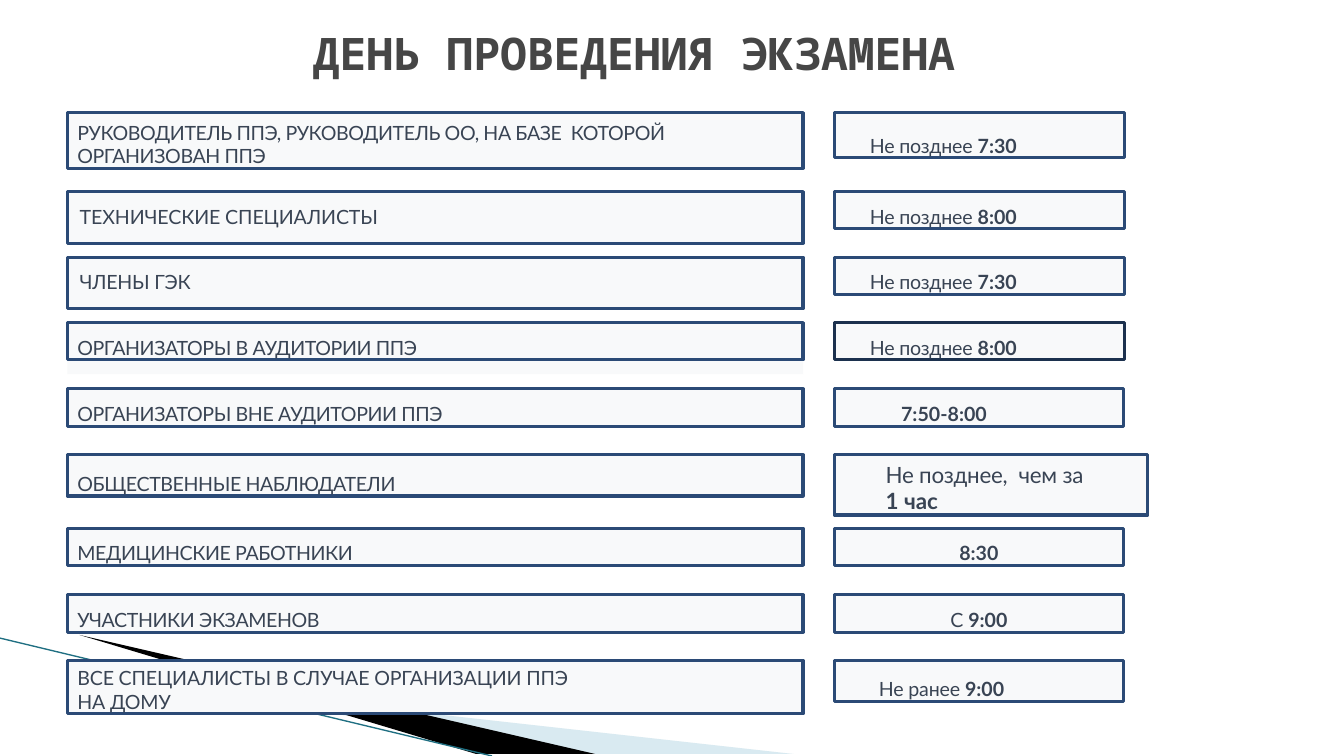
from dataclasses import dataclass

from lxml.etree import SubElement
from pptx import Presentation
from pptx.dml.color import RGBColor
from pptx.enum.shapes import MSO_CONNECTOR, MSO_SHAPE
from pptx.enum.text import MSO_ANCHOR, PP_ALIGN
from pptx.oxml.ns import qn
from pptx.util import Cm, Pt

WHITE_SMOKE = RGBColor(0xF8, 0xF9, 0xFA)
NAVY = RGBColor(0x2B, 0x4A, 0x76)
DARK_NAVY = RGBColor(0x1C, 0x31, 0x4E)
SLATE = RGBColor(0x39, 0x44, 0x54)
TITLE_GREY = RGBColor(0x46, 0x46, 0x46)
PALE_BLUE = RGBColor(0xA0, 0xCB, 0xDC)
TEAL = RGBColor(0x1F, 0x6F, 0x82)
BLACK = RGBColor(0, 0, 0)

LABEL_LEFT, LABEL_WIDTH = 1.7, 18.54
TIME_LEFT = 21.03


@dataclass(frozen=True)
class Label:
    """Who has to come; lengths in cm, letter spacing in points."""
    text: str
    height: float = 0.94
    spacing: float = -0.3
    inset_left: float = 0.25
    inset_top: float = 0.33


@dataclass(frozen=True)
class Time:
    """When to come: plain words followed by bold ones."""
    plain: str
    bold: str
    inset_left: float = 0.89
    inset_top: float = 0.33
    inset_right: float = 0
    width: float = 7.32
    height: float = 0.94
    size: float = 14
    align: PP_ALIGN = PP_ALIGN.LEFT
    border: RGBColor = NAVY


@dataclass(frozen=True)
class Row:
    top: float
    label: Label
    time: Time


ROWS = [
    Row(2.84, Label("РУКОВОДИТЕЛЬ ППЭ, РУКОВОДИТЕЛЬ ОО, НА БАЗЕ  КОТОРОЙ ОРГАНИЗОВАН ППЭ",
                    height=1.4, inset_top=0.2),
        Time("Не позднее ", "7:30", inset_top=0.53, height=1.12)),
    Row(4.83, Label("ТЕХНИЧЕСКИЕ СПЕЦИАЛИСТЫ", height=1.3, spacing=-0.1, inset_left=0.31),
        Time("Не позднее ", "8:00")),
    Row(6.48, Label("ЧЛЕНЫ ГЭК", height=1.3, spacing=-0.2, inset_left=0.31),
        Time("Не позднее ", "7:30")),
    Row(8.13, Label("ОРГАНИЗАТОРЫ В АУДИТОРИИ ППЭ"),
        Time("Не позднее ", "8:00", border=DARK_NAVY)),
    Row(9.8, Label("ОРГАНИЗАТОРЫ ВНЕ АУДИТОРИИ ППЭ"),
        Time("", "7:50-8:00", inset_left=1.68, width=7.28)),
    Row(11.46, Label("ОБЩЕСТВЕННЫЕ НАБЛЮДАТЕЛИ", height=1.04, inset_top=0.43),
        Time("Не позднее,  чем за ", "1 час", inset_left=1.29, inset_top=0.15,
             inset_right=1.3, width=7.9, height=1.52, size=16)),
    Row(13.31, Label("МЕДИЦИНСКИЕ РАБОТНИКИ"),
        Time("", "8:30", inset_left=0, width=7.28, align=PP_ALIGN.CENTER)),
    Row(14.99, Label("УЧАСТНИКИ ЭКЗАМЕНОВ"),
        Time("С ", "9:00", inset_left=0, width=7.28, align=PP_ALIGN.CENTER)),
    Row(16.64, Label("ВСЕ СПЕЦИАЛИСТЫ В СЛУЧАЕ ОРГАНИЗАЦИИ ППЭ\nНА ДОМУ",
                     height=1.35, spacing=-0.15, inset_top=0.15),
        Time("Не ранее ", "9:00", inset_left=1.12, inset_top=0.43, width=7.28, height=1.04)),
]


def format_run(run, font_name: str, size: float, color: RGBColor,
               spacing: float = 0, bold: bool = False) -> None:
    run.font.name = font_name
    run.font.size = Pt(size)
    run.font.color.rgb = color
    run.font.bold = bold
    run.font._element.set("spc", str(round(spacing * 100)))


def add_box(slide, left: float, top: float, width: float, height: float,
            border: RGBColor | None = NAVY):
    shape = slide.shapes.add_shape(MSO_SHAPE.RECTANGLE, Cm(left), Cm(top), Cm(width), Cm(height))
    shape.shadow.inherit = False
    shape.fill.solid()
    shape.fill.fore_color.rgb = WHITE_SMOKE
    if border is None:
        shape.line.fill.background()
    else:
        shape.line.color.rgb = border
        shape.line.width = Pt(2.25)
    return shape


def set_frame(text_frame, left: float, top: float, right: float = 0) -> None:
    text_frame.word_wrap = True
    text_frame.vertical_anchor = MSO_ANCHOR.TOP
    text_frame.margin_left, text_frame.margin_top = Cm(left), Cm(top)
    text_frame.margin_right, text_frame.margin_bottom = Cm(right), Cm(0)


def add_label(slide, top: float, label: Label) -> None:
    text_frame = add_box(slide, LABEL_LEFT, top, LABEL_WIDTH, label.height).text_frame
    set_frame(text_frame, label.inset_left, label.inset_top, right=0.5)
    text_frame.text = label.text
    for paragraph in text_frame.paragraphs:
        paragraph.alignment = PP_ALIGN.LEFT
        for run in paragraph.runs:
            format_run(run, "Lato", 14, SLATE, label.spacing)


def add_time(slide, top: float, time: Time) -> None:
    shape = add_box(slide, TIME_LEFT, top, time.width, time.height, time.border)
    set_frame(shape.text_frame, time.inset_left, time.inset_top, time.inset_right)
    paragraph = shape.text_frame.paragraphs[0]
    paragraph.alignment = time.align
    for text, bold in ((time.plain, False), (time.bold, True)):
        if text:
            run = paragraph.add_run()
            run.text = text
            format_run(run, "Lato", time.size, SLATE, 0 if bold else -0.15, bold)


def add_wedge(slide, points: list[tuple[float, float]], color: RGBColor):
    builder = slide.shapes.build_freeform(*points[0], scale=Cm(1))
    builder.add_line_segments(points[1:], close=True)
    shape = builder.convert_to_shape()
    shape.shadow.inherit = False
    shape.fill.solid()
    shape.fill.fore_color.rgb = color
    shape.line.fill.background()
    return shape


def add_corner_decoration(slide) -> None:
    pale_wedge = add_wedge(slide, [(1.85, 16.52), (20.1, 19.05), (15.44, 19.05)], PALE_BLUE)
    color = pale_wedge._element.spPr.find(f"{qn('a:solidFill')}/{qn('a:srgbClr')}")
    SubElement(color, qn("a:alpha"), val="40000")
    add_wedge(slide, [(1.81, 16.49), (15.33, 19.05), (12.42, 19.05)], BLACK)
    edge = slide.shapes.add_connector(MSO_CONNECTOR.STRAIGHT, Cm(0), Cm(16.08), Cm(12.4), Cm(19.05))
    edge.line.color.rgb = TEAL
    edge.line.width = Pt(0.95)
    SubElement(edge._element.spPr, qn("a:effectLst"))


def add_title(slide) -> None:
    text_frame = slide.shapes.add_textbox(Cm(1.37), Cm(0.6), Cm(29.21), Cm(1.4)).text_frame
    set_frame(text_frame, 0, 0.03)
    text_frame.vertical_anchor = MSO_ANCHOR.MIDDLE
    text_frame.text = "ДЕНЬ ПРОВЕДЕНИЯ ЭКЗАМЕНА"
    paragraph = text_frame.paragraphs[0]
    paragraph.alignment = PP_ALIGN.CENTER
    format_run(paragraph.runs[0], "Noto Sans Mono", 32, TITLE_GREY, -0.1, bold=True)


def main() -> None:
    presentation = Presentation()
    presentation.slide_width, presentation.slide_height = Cm(33.87), Cm(19.05)
    slide = presentation.slides.add_slide(presentation.slide_layouts[6])
    add_corner_decoration(slide)
    add_title(slide)
    auditorium_top = ROWS[3].top
    add_box(slide, LABEL_LEFT, auditorium_top, LABEL_WIDTH, 1.3, border=None)
    for row in ROWS:
        add_label(slide, row.top, row.label)
        add_time(slide, row.top, row.time)
    presentation.save("out.pptx")


if __name__ == "__main__":
    main()
